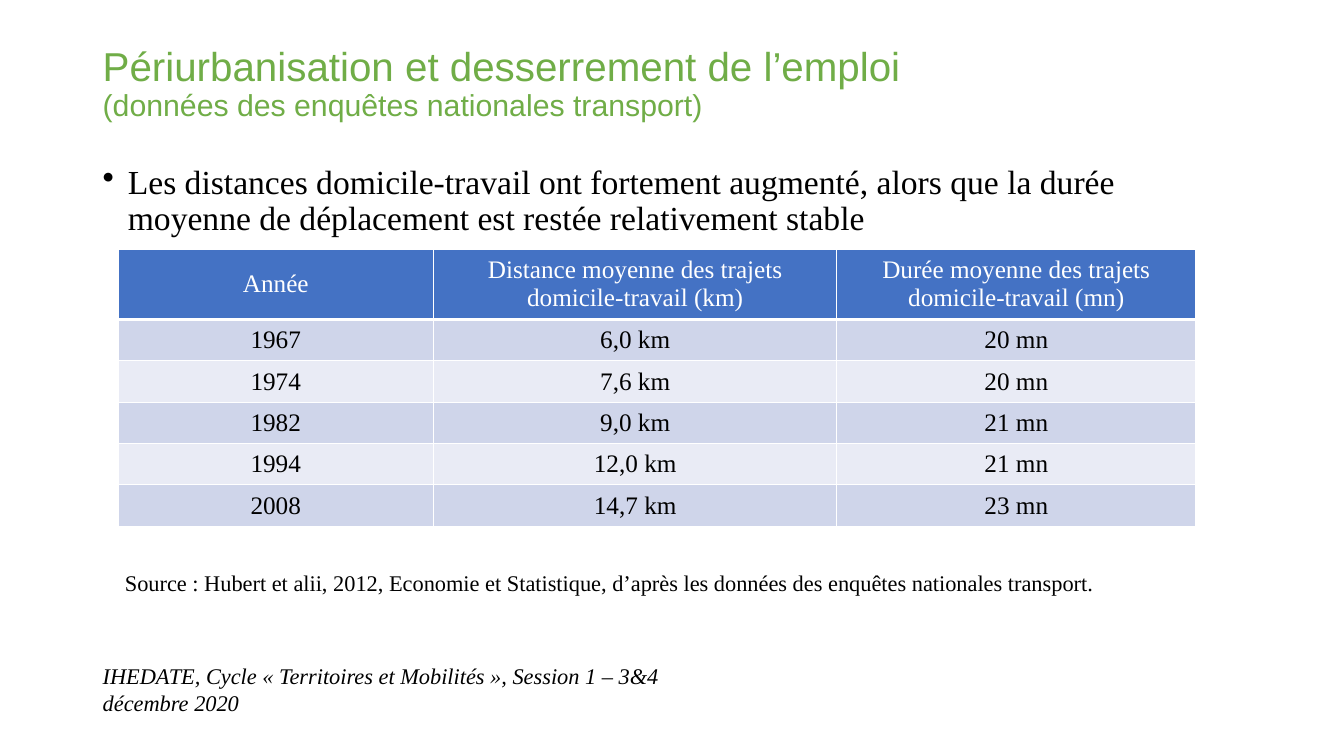
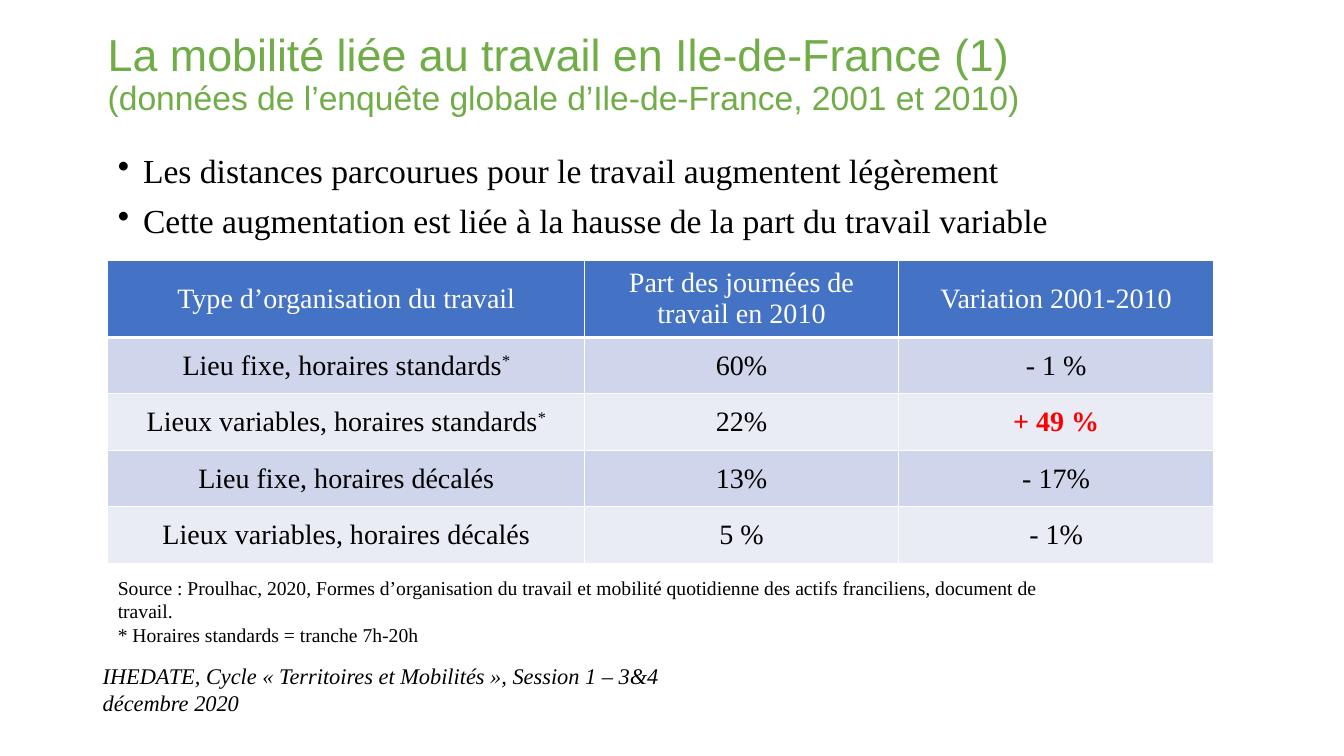
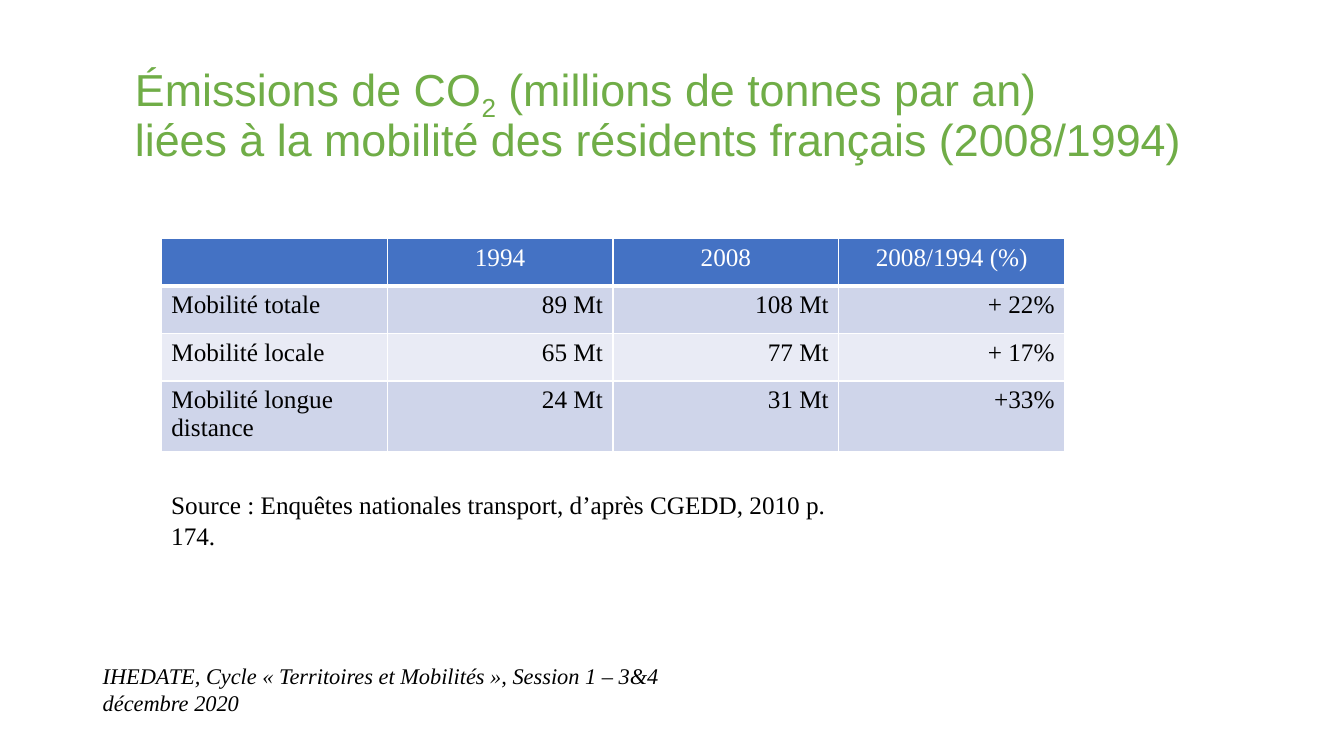
from dataclasses import dataclass

from lxml import etree
from pptx import Presentation
from pptx.dml.color import RGBColor
from pptx.enum.text import MSO_ANCHOR, PP_ALIGN
from pptx.oxml.ns import qn
from pptx.util import Pt

PX = 9144  # EMU, 100 px to the inch
LEFT, CENTER, RIGHT = PP_ALIGN.LEFT, PP_ALIGN.CENTER, PP_ALIGN.RIGHT
TOP, MIDDLE = MSO_ANCHOR.TOP, MSO_ANCHOR.MIDDLE
BLANK_LAYOUT = 6


@dataclass(frozen=True)
class Theme:
    heading_font: str = "Arial"
    body_font: str = "Times New Roman"
    heading: str = "70AD47"
    ink: str = "000000"
    paper: str = "FFFFFF"
    alert: str = "FF0000"
    header_fill: str = "4472C4"
    bands: tuple = ("CFD5EA", "E9EBF5")
    title: float = 32
    subtitle: float = 24
    title_small: float = 28.8
    subtitle_small: float = 21.6
    bullet: float = 24
    table_large: float = 20
    table: float = 18
    source_large: float = 18
    source: float = 16
    source_small: float = 14
    footer: float = 16
    line_spacing: float = 0.9
    bullet_gap: float = 10
    grid_line: float = 1
    header_line: float = 3


THEME = Theme()
FOOTER = "IHEDATE, Cycle « Territoires et Mobilités », Session 1 – 3&4 décembre 2020"


@dataclass(frozen=True)
class Span:
    """A piece of text that departs from its surroundings; baseline is in percent."""
    text: str
    baseline: int = 0
    alert: bool = False


def px(length):
    return length * PX


def add_runs(paragraph, content, size, font=THEME.body_font, color=THEME.ink, italic=False):
    """Write a string, or a list of strings and Spans, as runs."""
    pieces = content if isinstance(content, list) else [content]
    for piece in pieces:
        span = piece if isinstance(piece, Span) else Span(piece)
        run = paragraph.add_run()
        run.text = span.text
        run.font.name = font
        run.font.size = Pt(size)
        run.font.bold = span.alert
        run.font.italic = italic
        run.font.color.rgb = RGBColor.from_string(THEME.alert if span.alert else color)
        if span.baseline:
            run.font._element.set("baseline", str(span.baseline * 1000))


def add_text_frame(slide, box, anchor=TOP):
    frame = slide.shapes.add_textbox(*map(px, box)).text_frame
    frame.word_wrap = True
    frame.vertical_anchor = anchor
    return frame


def paragraphs_for(frame, contents):
    """Pair each content with a paragraph of the frame."""
    for index, content in enumerate(contents):
        yield (frame.add_paragraph() if index else frame.paragraphs[0]), content


def add_title(slide, box, lines):
    """Lines are (content, size) pairs."""
    frame = add_text_frame(slide, box, MIDDLE)
    for paragraph, (content, size) in paragraphs_for(frame, lines):
        paragraph.line_spacing = THEME.line_spacing
        add_runs(paragraph, content, size, THEME.heading_font, THEME.heading)


def add_bullets(slide, box, items):
    frame = add_text_frame(slide, box)
    for index, (paragraph, item) in enumerate(paragraphs_for(frame, items)):
        properties = paragraph._p.get_or_add_pPr()
        properties.set("marL", str(px(25)))
        properties.set("indent", str(px(-25)))
        etree.SubElement(properties, qn("a:buChar")).set("char", "•")
        paragraph.line_spacing = THEME.line_spacing
        if index:
            paragraph.space_before = Pt(THEME.bullet_gap)
        add_runs(paragraph, item, THEME.bullet)


def add_source(slide, box, lines, size):
    frame = add_text_frame(slide, box)
    for paragraph, line in paragraphs_for(frame, lines):
        add_runs(paragraph, line, size)


def add_footer(slide):
    frame = add_text_frame(slide, (92, 661, 645, 45), MIDDLE)
    add_runs(frame.paragraphs[0], FOOTER, THEME.footer, italic=True)


def set_borders(cell, bottom):
    properties = cell._tc.get_or_add_tcPr()
    grid = THEME.grid_line
    for side, width in (("L", grid), ("R", grid), ("T", grid), ("B", bottom)):
        line = etree.SubElement(properties, qn(f"a:ln{side}"), w=str(Pt(width)))
        fill = etree.SubElement(line, qn("a:solidFill"))
        etree.SubElement(fill, qn("a:srgbClr"), val=THEME.paper)


def add_data_table(slide, origin, widths, heights, rows, size,
                   body_aligns=(CENTER, CENTER, CENTER), anchor=MIDDLE):
    """Table with a centred header row over banded rows."""
    left, top = origin
    table = slide.shapes.add_table(
        len(rows), len(widths), px(left), px(top), px(sum(widths)), px(sum(heights))).table
    for column, width in zip(table.columns, widths):
        column.width = px(width)
    for row_index, (contents, height) in enumerate(zip(rows, heights)):
        table.rows[row_index].height = px(height)
        is_header = row_index == 0
        fill = THEME.header_fill if is_header else THEME.bands[(row_index - 1) % 2]
        for column_index, content in enumerate(contents):
            cell = table.cell(row_index, column_index)
            cell.vertical_anchor = anchor
            set_borders(cell, THEME.header_line if is_header else THEME.grid_line)
            cell.fill.solid()
            cell.fill.fore_color.rgb = RGBColor.from_string(fill)
            if content:
                paragraph = cell.text_frame.paragraphs[0]
                paragraph.alignment = CENTER if is_header else body_aligns[column_index]
                add_runs(paragraph, content, size, color=THEME.paper if is_header else THEME.ink)


def build_commute_trend(slide):
    add_title(slide, (92, 40, 1150, 89), [
        ("Périurbanisation et desserrement de l’emploi", THEME.title_small),
        ("(données des enquêtes nationales transport)", THEME.subtitle_small),
    ])
    add_bullets(slide, (92, 159, 1150, 85), [
        "Les distances domicile-travail ont fortement augmenté, alors que la durée "
        "moyenne de déplacement est restée relativement stable",
    ])
    add_data_table(slide, (117, 247), (313, 400, 356), [65] + [41] * 5, [
        ("Année", "Distance moyenne des trajets domicile-travail (km)",
         "Durée moyenne des trajets domicile-travail (mn)"),
        ("1967", "6,0 km", "20 mn"),
        ("1974", "7,6 km", "20 mn"),
        ("1982", "9,0 km", "21 mn"),
        ("1994", "12,0 km", "21 mn"),
        ("2008", "14,7 km", "23 mn"),
    ], THEME.table)
    add_source(slide, (114, 560, 1080, 36), [
        "Source : Hubert et alii, 2012, Economie et Statistique, d’après les données "
        "des enquêtes nationales transport.",
    ], THEME.source)


def build_work_mobility(slide):
    add_title(slide, (97, 27, 1150, 96), [
        ("La mobilité liée au travail en Ile-de-France (1)", THEME.title),
        ("(données de l’enquête globale d’Ile-de-France, 2001 et 2010)", THEME.subtitle),
    ])
    add_bullets(slide, (107, 148, 1165, 100), [
        "Les distances parcourues pour le travail augmentent légèrement",
        "Cette augmentation est liée à la hausse de la part du travail variable",
    ])
    note_mark = Span("*", baseline=30)
    add_data_table(slide, (107, 258), (473, 311, 313), [71] + [56] * 4, [
        ("Type d’organisation du travail", "Part des journées de travail en 2010",
         "Variation 2001-2010"),
        (["Lieu fixe, horaires standards", note_mark], "60%", "- 1 %"),
        (["Lieux variables, horaires standards", note_mark], "22%", Span("+ 49 %", alert=True)),
        ("Lieu fixe, horaires décalés", "13%", "- 17%"),
        ("Lieux variables, horaires décalés", "5 %", "- 1%"),
    ], THEME.table_large)
    add_source(slide, (107, 566, 960, 80), [
        "Source : Proulhac, 2020, Formes d’organisation du travail et mobilité quotidienne "
        "des actifs franciliens, document de travail.",
        "* Horaires standards = tranche 7h-20h",
    ], THEME.source_small)


def build_emissions(slide):
    add_title(slide, (124, 69, 1150, 89), [
        (["Émissions de CO", Span("2", baseline=-25), " (millions de tonnes par an)"],
         THEME.title),
        ("liées à la mobilité des résidents français (2008/1994)", THEME.title),
    ])
    add_data_table(slide, (160, 237), [224] * 4, (47, 47, 47, 65), [
        ("", "1994", "2008", "2008/1994 (%)"),
        ("Mobilité totale", "89 Mt", "108 Mt", "+ 22%"),
        ("Mobilité locale", "65 Mt", "77 Mt", "+ 17%"),
        ("Mobilité longue distance", "24 Mt", "31 Mt", "+33%"),
    ], THEME.table, (LEFT, RIGHT, RIGHT, RIGHT), TOP)
    add_source(slide, (160, 481, 700, 70), [
        "Source : Enquêtes nationales transport, d’après CGEDD, 2010 p. 174.",
    ], THEME.source_large)


def main():
    deck = Presentation()
    deck.slide_width, deck.slide_height = px(1333), px(750)
    for build in (build_commute_trend, build_work_mobility, build_emissions):
        slide = deck.slides.add_slide(deck.slide_layouts[BLANK_LAYOUT])
        add_footer(slide)
        build(slide)
    deck.save("out.pptx")


if __name__ == "__main__":
    main()
